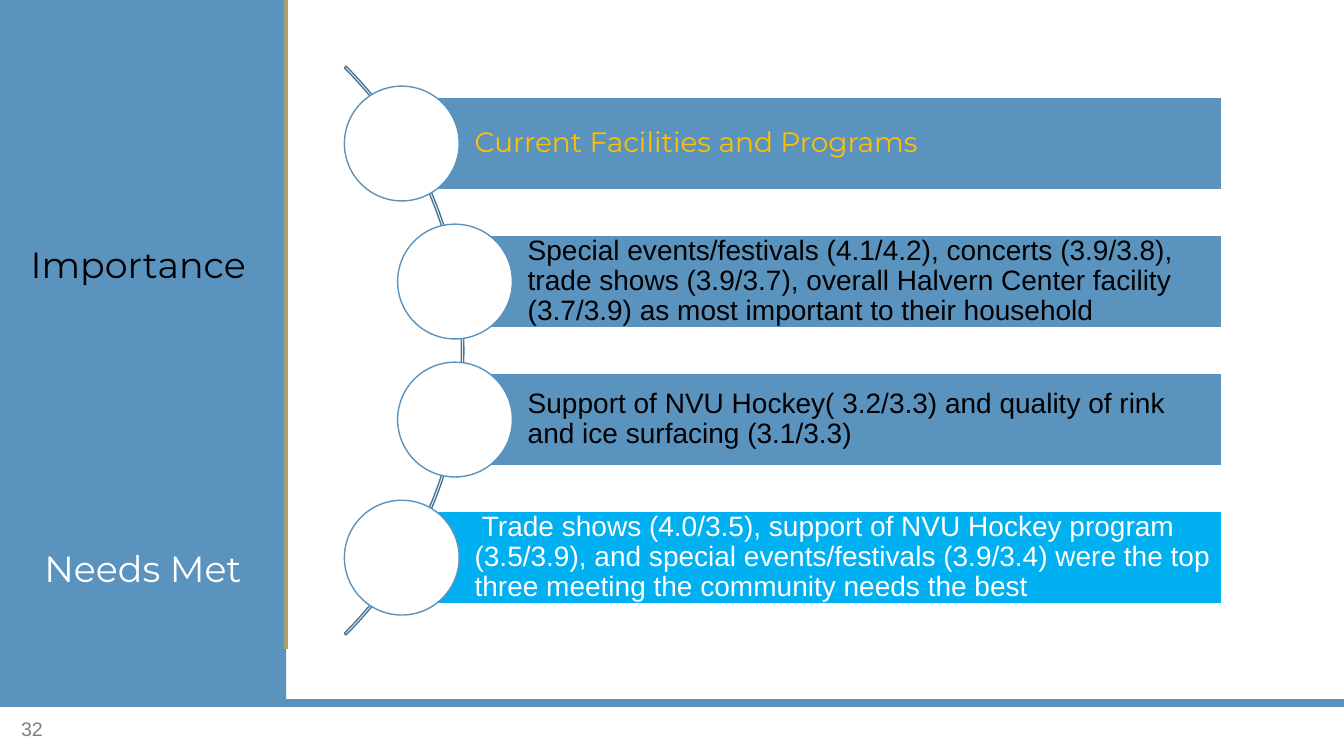
from dataclasses import dataclass
from lxml.etree import SubElement
from pptx import Presentation
from pptx.dml.color import RGBColor
from pptx.enum.shapes import MSO_CONNECTOR, MSO_SHAPE
from pptx.enum.text import MSO_ANCHOR, PP_ALIGN
from pptx.oxml.ns import qn
from pptx.util import Pt


@dataclass(frozen=True)
class Theme:
    blue: str = "5A93BE"
    cyan: str = "00B0F0"
    steel: str = "487698"
    gold: str = "A8A16E"
    amber: str = "FFC000"
    black: str = "000000"
    white: str = "FFFFFF"
    gray: str = "808080"
    head: str = "Montserrat"
    body: str = "Arial"
    label: int = 26
    text: int = 20
    small: int = 14


T = Theme()
LABELS = [("Importance ", T.black, 0), ("Needs Met", T.white, 186)]
PAGE = "32"
# text, font, text colour, bar colour, x of the circle's centre
ROWS = [
    ("Current Facilities and Programs", T.head, T.amber, T.blue, 287),
    ("Special events/festivals (4.1/4.2), concerts (3.9/3.8), trade shows "
     "(3.9/3.7), overall Halvern Center facility (3.7/3.9) as most important "
     "to their household", T.body, T.black, T.blue, 325),
    ("Support of NVU Hockey( 3.2/3.3) and quality of rink and ice surfacing "
     "(3.1/3.3)", T.body, T.black, T.blue, 325),
    (" Trade shows (4.0/3.5), support of NVU Hockey program (3.5/3.9), and "
     "special events/festivals (3.9/3.4) were the top three meeting the "
     "community needs the best", T.body, T.white, T.cyan, 287),
]
WIDE, HIGH = 960, 540
SIDE, BASE = 204.5, 502
RIGHT, MID, STEP = 873, 250.4, 98.6
BAR, DISC = 65.5, 82
HUB, RADIUS = 44, 287.3

deck = Presentation()
deck.slide_width, deck.slide_height = Pt(WIDE), Pt(HIGH)
slide = deck.slides.add_slide(deck.slide_layouts[6])


def rgb(code):
    return RGBColor.from_string(code)


def shape(kind, x, y, w, h, fill=None, line=None):
    item = slide.shapes.add_shape(kind, Pt(x), Pt(y), Pt(w), Pt(h))
    item.shadow.inherit = False
    if fill:
        item.fill.solid()
        item.fill.fore_color.rgb = rgb(fill)
    else:
        item.fill.background()
    if line:
        item.line.color.rgb = rgb(line)
        item.line.width = Pt(1)
    else:
        item.line.fill.background()
    return item


def rule(x1, y1, x2, y2, color, width):
    line = slide.shapes.add_connector(
        MSO_CONNECTOR.STRAIGHT, Pt(x1), Pt(y1), Pt(x2), Pt(y2))
    line.line.color.rgb = rgb(color)
    line.line.width = Pt(width)
    SubElement(line._element.spPr, qn("a:effectLst"))


def inset(frame, left, top, right, bottom):
    frame.word_wrap = True
    frame.margin_left, frame.margin_top = Pt(left), Pt(top)
    frame.margin_right, frame.margin_bottom = Pt(right), Pt(bottom)


def write(para, text, face, size, color, align=PP_ALIGN.LEFT):
    para.text = text
    para.alignment = align
    para.font.name, para.font.size = face, Pt(size)
    para.font.color.rgb = rgb(color)


def sidebar():
    panel = shape(MSO_SHAPE.RECTANGLE, 0, 0, SIDE, BASE, T.blue)
    frame = panel.text_frame
    inset(frame, 7.2, 173, 7.2, 3.6)
    frame.vertical_anchor = MSO_ANCHOR.TOP
    for i, (text, color, gap) in enumerate(LABELS):
        para = frame.add_paragraph() if i else frame.paragraphs[0]
        write(para, text, T.head, T.label, color, PP_ALIGN.CENTER)
        para.space_before = Pt(gap)
    rule(SIDE, 0, SIDE, 463.5, T.gold, 3)
    rule(0, BASE, WIDE, BASE, T.blue, 6)


def number():
    box = slide.shapes.add_textbox(Pt(8), Pt(506), Pt(216), Pt(29))
    frame = box.text_frame
    inset(frame, 7.2, 3.6, 7.2, 3.6)
    frame.vertical_anchor = MSO_ANCHOR.MIDDLE
    write(frame.paragraphs[0], PAGE, T.body, T.small, T.gray)


def arc():
    band = shape(MSO_SHAPE.BLOCK_ARC, HUB - RADIUS, MID - RADIUS,
                 2 * RADIUS, 2 * RADIUS, line=T.steel)
    for i, value in enumerate((189, 27, 0.003)):
        band.adjustments[i] = value


def row(i, text, face, color, fill, x):
    y = MID + (i - (len(ROWS) - 1) / 2) * STEP
    bar = shape(MSO_SHAPE.RECTANGLE, x, y - BAR / 2, RIGHT - x, BAR,
                fill, T.white)
    frame = bar.text_frame
    inset(frame, 52, 4, 4, 4)
    frame.vertical_anchor = MSO_ANCHOR.MIDDLE
    write(frame.paragraphs[0], text, face, T.text, color)
    frame.paragraphs[0].line_spacing = 0.9
    shape(MSO_SHAPE.OVAL, x - DISC / 2, y - DISC / 2, DISC, DISC,
          T.white, T.blue)


sidebar()
number()
arc()
for i, item in enumerate(ROWS):
    row(i, *item)
deck.save("out.pptx")
